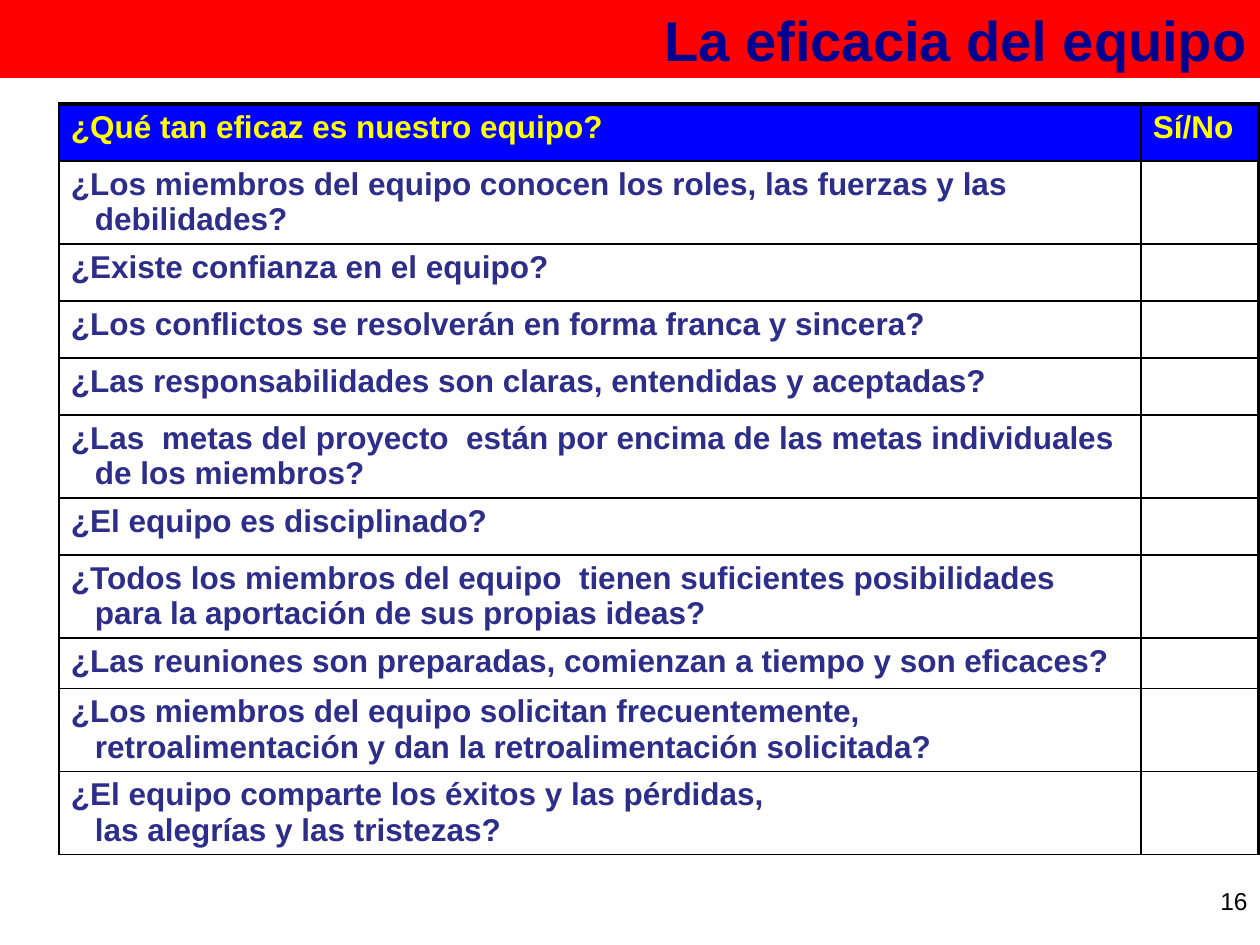
from lxml import etree
from pptx import Presentation
from pptx import util as u
from pptx.dml.color import RGBColor
from pptx.enum import text
from pptx.oxml import ns

PX = u.Inches(1) / 126
FONT = "Arial"
RED, BLUE, YELLOW = "FF0000", "0000FF", "FFFF00"
NAVY, INDIGO, BLACK = "000090", "2D2D8A", "000000"

HEADER = ["¿Qué tan eficaz es nuestro equipo?", "Sí/No"]
SHORT, NORMAL, TALL = 48, 57, 83
QUESTIONS = [
    ("¿Los miembros del equipo conocen los roles, las fuerzas y las debilidades?", TALL),
    ("¿Existe confianza en el equipo?", NORMAL),
    ("¿Los conflictos se resolverán en forma franca y sincera?", NORMAL),
    ("¿Las responsabilidades son claras, entendidas y aceptadas?", NORMAL),
    ("¿Las  metas del proyecto  están por encima de las metas individuales de los miembros?", TALL),
    ("¿El equipo es disciplinado?", NORMAL),
    ("¿Todos los miembros del equipo  tienen suficientes posibilidades "
     "para la aportación de sus propias ideas?", TALL),
    ("¿Las reuniones son preparadas, comienzan a tiempo y son eficaces?", SHORT),
    ("¿Los miembros del equipo solicitan frecuentemente,  "
     "retroalimentación y dan la retroalimentación solicitada?", TALL),
    ("¿El equipo comparte los éxitos y las pérdidas, \nlas alegrías y las tristezas?", TALL),
]


def px(length):
    return u.Emu(round(length * PX))


def color(value):
    return RGBColor.from_string(value)


def write(para, words, size, ink, bold=False, align=None):
    para.text = words
    para.alignment = align
    for span in para.runs:
        span.font.name = FONT
        span.font.size = u.Pt(size)
        span.font.bold = bold
        span.font.color.rgb = color(ink)


def add_title(page, left, top, width, height):
    title = page.shapes.title
    title.left, title.top, title.width, title.height = map(px, (left, top, width, height))
    title.fill.solid()
    title.fill.fore_color.rgb = color(RED)
    frame = title.text_frame
    frame.auto_size = text.MSO_AUTO_SIZE.NONE
    frame.vertical_anchor = text.MSO_ANCHOR.MIDDLE
    write(frame.paragraphs[0], "La eficacia del equipo", 32, NAVY, True, text.PP_ALIGN.RIGHT)


def set_borders(cell, widths):
    """Draw the left, right, top and bottom lines, widths in points."""
    properties = cell._tc.get_or_add_tcPr()
    for index, (side, width) in enumerate(zip("LRTB", widths)):
        line = etree.Element(ns.qn(f"a:ln{side}"), w=str(u.Pt(width)))
        fill = etree.SubElement(line, ns.qn("a:solidFill"))
        etree.SubElement(fill, ns.qn("a:srgbClr"), val=BLACK)
        properties.insert(index, line)


def add_checklist(page, left, top, width, answer_width):
    rows = [(HEADER, NORMAL)] + [([question, ""], height) for question, height in QUESTIONS]
    total = sum(height for _, height in rows)
    table = page.shapes.add_table(len(rows), 2, *map(px, (left, top, width, total))).table
    table.first_row = table.horz_banding = False
    table.columns[0].width = px(width - answer_width)
    table.columns[1].width = px(answer_width)

    for i, (words, height) in enumerate(rows):
        table.rows[i].height = px(height)
        for j, entry in enumerate(words):
            cell = table.cell(i, j)
            cell.margin_left = cell.margin_right = px(12)
            cell.margin_top = cell.margin_bottom = px(6)
            para = cell.text_frame.paragraphs[0]
            para.font.size = u.Pt(18)
            write(para, entry, 18, INDIGO if i else YELLOW, True)
            if i == 0:
                cell.fill.solid()
                cell.fill.fore_color.rgb = color(BLUE)
            else:
                cell.fill.background()
                # Hanging indent for the wrapped questions
                indent = para._p.get_or_add_pPr()
                indent.set("marL", str(px(24)))
                indent.set("indent", str(px(-24)))
            set_borders(cell, (1, 2.25 if j else 1, 1 if i else 2.25, 1))


def add_page_number(page, left, top, width, height):
    box = page.shapes.add_textbox(*map(px, (left, top, width, height)))
    box.text_frame.word_wrap = True
    write(box.text_frame.paragraphs[0], "16", 14, BLACK, align=text.PP_ALIGN.RIGHT)


def main():
    deck = Presentation()
    deck.slide_width, deck.slide_height = px(1260), px(945)
    page = deck.slides.add_slide(deck.slide_layouts[5])
    add_title(page, 0, 0, 1260, 78)
    add_checklist(page, 59, 104, 1200, 118)
    add_page_number(page, 966, 880, 294, 65)
    deck.save("out.pptx")


if __name__ == "__main__":
    main()
